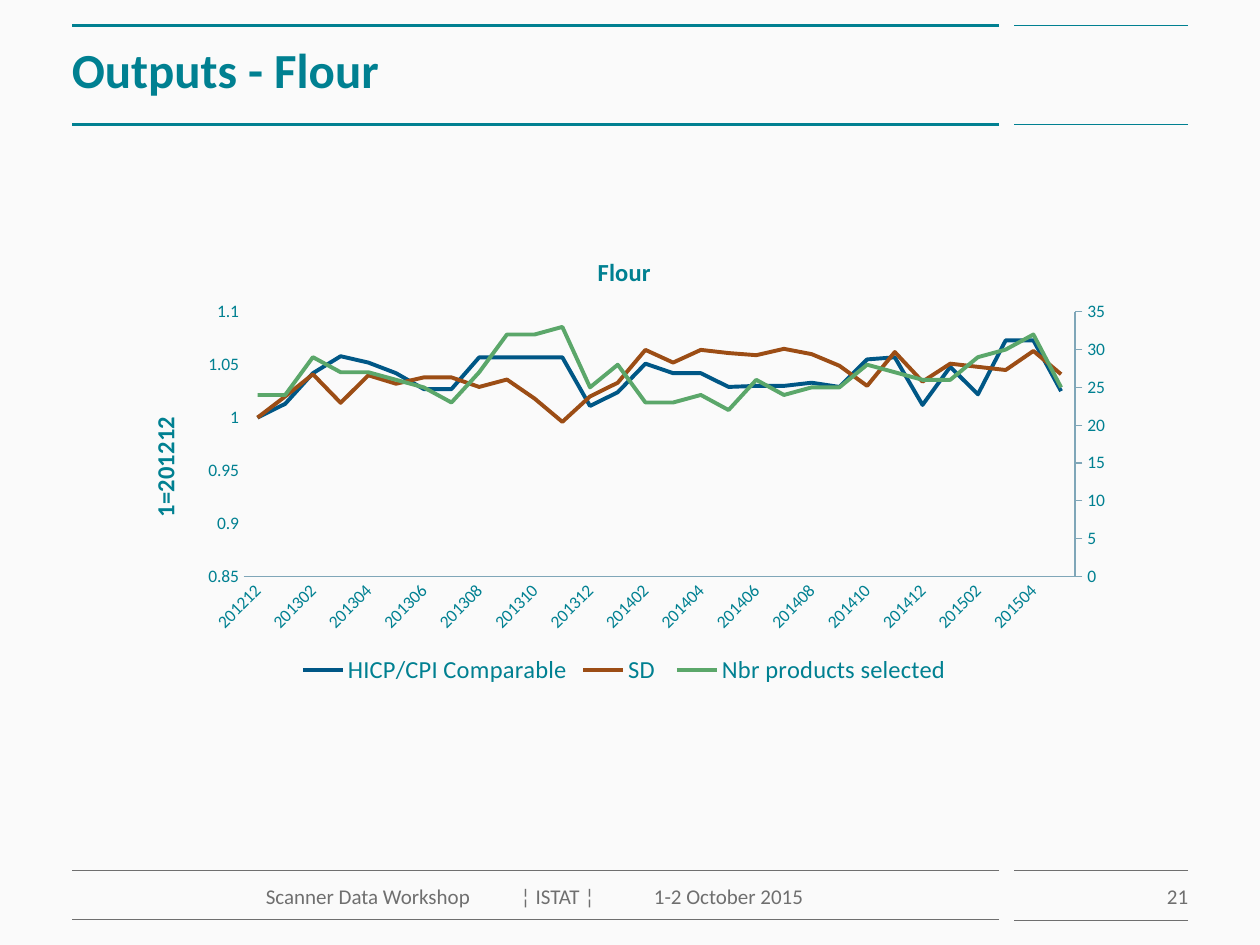
import copy
from dataclasses import dataclass

import lxml.etree
import pptx
import pptx.chart.data
import pptx.dml.color
import pptx.enum.chart
import pptx.enum.shapes
import pptx.enum.text
import pptx.oxml
import pptx.oxml.ns
import pptx.util

Inches = pptx.util.Inches
Pt = pptx.util.Pt
RGBColor = pptx.dml.color.RGBColor
qn = pptx.oxml.ns.qn
ALIGN = pptx.enum.text.PP_ALIGN
ANCHOR = pptx.enum.text.MSO_ANCHOR
TICK = pptx.enum.chart.XL_TICK_MARK

TEAL = RGBColor(0x00, 0x80, 0x91)
GREY = RGBColor(0x6F, 0x6F, 0x6F)
BACKGROUND = RGBColor(0xFA, 0xFA, 0xFA)
AXIS = RGBColor(0x7F, 0xA6, 0xB8)
BLUE = RGBColor(0x00, 0x57, 0x86)
BROWN = RGBColor(0x9C, 0x4D, 0x15)
GREEN = RGBColor(0x5B, 0xA7, 0x6A)
FONT = "Calibri"


@dataclass
class Rule:
    y: float
    color: RGBColor
    wide_pt: float
    narrow_pt: float


@dataclass
class Label:
    text: str
    box: tuple[float, float, float, float]
    insets: tuple[float, float, float, float]
    size: int
    color: RGBColor
    bold: bool = False
    align: ALIGN = ALIGN.LEFT
    anchor: ANCHOR = ANCHOR.TOP
    tabs: tuple[float, ...] = ()


@dataclass
class Series:
    name: str
    color: RGBColor
    values: list[float]


RULES = [
    Rule(0.2, TEAL, 1.5, 0.75),
    Rule(0.99, TEAL, 1.5, 0.75),
    Rule(6.91, GREY, 0.75, 0.25),
    Rule(7.3, GREY, 0.75, 0.25),
]
LABELS = [
    Label("Outputs - Flour", (0.57, 0.2, 7.36, 0.79), (0, 0, 0, 0.1), 28, TEAL,
          bold=True, anchor=ANCHOR.MIDDLE),
    Label("21", (8.05, 6.91, 1.38, 0.39), (0, 0.1, 0, 0), 12, GREY, align=ALIGN.RIGHT),
    Label("Scanner Data Workshop\t¦ ISTAT ¦\t1-2 October 2015", (0.59, 6.91, 7.34, 0.39),
          (1.52, 0.1, 0, 0), 12, GREY, tabs=(2.02, 3.08)),
]
MONTHS = [str(100 * (2012 + m // 12) + m % 12 + 1) for m in range(11, 41)]
SERIES = [
    Series("HICP/CPI Comparable", BLUE, [
        1, 1.013, 1.042, 1.058, 1.052, 1.042, 1.027, 1.027, 1.057, 1.057,
        1.057, 1.057, 1.011, 1.024, 1.051, 1.042, 1.042, 1.029, 1.03, 1.03,
        1.033, 1.029, 1.055, 1.057, 1.012, 1.048, 1.022, 1.073, 1.073, 1.025]),
    Series("SD ", BROWN, [
        1, 1.02, 1.041, 1.014, 1.04, 1.032, 1.038, 1.038, 1.029, 1.036,
        1.018, 0.996, 1.02, 1.033, 1.064, 1.052, 1.064, 1.061, 1.059, 1.065,
        1.06, 1.049, 1.03, 1.062, 1.034, 1.051, 1.048, 1.045, 1.063, 1.041]),
    Series("Nbr products selected", GREEN, [
        24, 24, 29, 27, 27, 26, 25, 23, 27, 32, 32, 33, 25, 28, 23,
        23, 24, 22, 26, 24, 25, 25, 28, 27, 26, 26, 29, 30, 32, 25]),
]


def style_font(font, size: int, color: RGBColor, bold: bool = False) -> None:
    font.name, font.size, font.bold = FONT, Pt(size), bold
    font.color.rgb = color


def draw_line(slide, x1: float, x2: float, y: float, color: RGBColor, width: float) -> None:
    sp = slide.shapes.add_connector(pptx.enum.shapes.MSO_CONNECTOR.STRAIGHT,
                                    Inches(x1), Inches(y), Inches(x2), Inches(y))
    sp.line.color.rgb = color
    sp.line.width = Pt(width)
    lxml.etree.SubElement(sp._element.spPr, qn("a:effectLst"))


def draw_rule(slide, rule: Rule) -> None:
    draw_line(slide, 7.93, 0.57, rule.y, rule.color, rule.wide_pt)
    draw_line(slide, 9.43, 8.05, rule.y, rule.color, rule.narrow_pt)


def draw_label(slide, label: Label) -> None:
    tf = slide.shapes.add_textbox(*map(Inches, label.box)).text_frame
    tf.word_wrap = True
    tf.vertical_anchor = label.anchor
    tf.margin_left, tf.margin_top, tf.margin_right, tf.margin_bottom = map(Inches, label.insets)
    p = tf.paragraphs[0]
    p.alignment = label.align
    if label.tabs:
        tab_list = lxml.etree.SubElement(p._p.get_or_add_pPr(), qn("a:tabLst"))
        for stop in label.tabs:
            lxml.etree.SubElement(tab_list, qn("a:tab"), pos=str(Inches(stop)), algn="l")
    r = p.add_run()
    r.text = label.text
    style_font(r.font, label.size, label.color, label.bold)


def write_title(owner, text: str) -> None:
    r = owner.text_frame.paragraphs[0].add_run()
    r.text = text
    style_font(r.font, 14, TEAL, True)


def set_layout(plot_area, x: float, y: float, w: float, h: float) -> None:
    for old in plot_area.findall(qn("c:layout")):
        plot_area.remove(old)
    layout = lxml.etree.Element(qn("c:layout"))
    manual = lxml.etree.SubElement(layout, qn("c:manualLayout"))
    settings = {"layoutTarget": "inner", "xMode": "edge", "yMode": "edge",
                "x": x, "y": y, "w": w, "h": h}
    for tag, value in settings.items():
        lxml.etree.SubElement(manual, qn(f"c:{tag}"), val=str(value))
    plot_area.insert(0, layout)


def move_last_series_right(chart) -> None:
    plot_area = chart._chartSpace.chart.plotArea
    left = plot_area.find(qn("c:lineChart"))
    right = copy.deepcopy(left)
    left.remove(left.findall(qn("c:ser"))[-1])
    for ser in right.findall(qn("c:ser"))[:-1]:
        right.remove(ser)
    for ax_id, number in zip(right.findall(qn("c:axId")), ("50001", "50002")):
        ax_id.set("val", number)
    left.addnext(right)
    ns = 'xmlns:c="http://schemas.openxmlformats.org/drawingml/2006/chart"'
    cat_axis = pptx.oxml.parse_xml(
        f'<c:catAx {ns}><c:axId val="50001"/><c:scaling><c:orientation val="minMax"/></c:scaling>'
        '<c:delete val="1"/><c:axPos val="b"/><c:crossAx val="50002"/></c:catAx>')
    val_axis = pptx.oxml.parse_xml(
        f'<c:valAx {ns}><c:axId val="50002"/><c:scaling><c:orientation val="minMax"/>'
        '<c:max val="35"/><c:min val="0"/></c:scaling><c:delete val="0"/><c:axPos val="r"/>'
        '<c:numFmt formatCode="General" sourceLinked="0"/><c:majorTickMark val="out"/>'
        '<c:minorTickMark val="none"/><c:tickLblPos val="nextTo"/><c:crossAx val="50001"/>'
        '<c:crosses val="max"/><c:majorUnit val="5"/></c:valAx>')
    plot_area.findall(qn("c:valAx"))[-1].addnext(val_axis)
    val_axis.addnext(cat_axis)
    axis = pptx.chart.axis.ValueAxis(val_axis)
    style_font(axis.tick_labels.font, 10, TEAL)
    axis.format.line.color.rgb = AXIS


def draw_chart(slide) -> None:
    data = pptx.chart.data.CategoryChartData()
    data.categories = MONTHS
    for series in SERIES:
        data.add_series(series.name, series.values)
    chart = slide.shapes.add_chart(pptx.enum.chart.XL_CHART_TYPE.LINE, Inches(0.98), Inches(1.86),
                                   Inches(7.95), Inches(3.62), data).chart
    style_font(chart.font, 10, TEAL)
    write_title(chart.chart_title, "Flour")
    chart.has_legend = True
    chart.legend.position = pptx.enum.chart.XL_LEGEND_POSITION.BOTTOM
    chart.legend.include_in_layout = False
    style_font(chart.legend.font, 14, TEAL)
    chart.plots[0].vary_by_categories = False
    for line, series in zip(chart.plots[0].series, SERIES):
        line.smooth = False
        line.marker.style = pptx.enum.chart.XL_MARKER_STYLE.NONE
        line.format.line.color.rgb = series.color
        line.format.line.width = Pt(2.25)
    months, index = chart.category_axis, chart.value_axis
    for axis in (months, index):
        axis.major_tick_mark = axis.minor_tick_mark = TICK.NONE
        axis.has_major_gridlines = False
        style_font(axis.tick_labels.font, 10, TEAL)
    months.format.line.color.rgb = AXIS
    months._element.find(qn("c:txPr")).find(qn("a:bodyPr")).set("rot", "-2700000")
    skip = lxml.etree.Element(qn("c:tickLblSkip"), val="2")
    months._element.find(qn("c:noMultiLvlLbl")).addprevious(skip)
    index.minimum_scale, index.maximum_scale, index.major_unit = 0.85, 1.1, 0.05
    index.tick_labels.number_format = "General"
    index.tick_labels.number_format_is_linked = False
    index.format.line.fill.background()
    write_title(index.axis_title, "1=201212")
    index.axis_title.text_frame._txBody.bodyPr.set("rot", "-5400000")
    set_layout(chart._chartSpace.chart.plotArea, 0.12, 0.17, 0.83, 0.58)
    move_last_series_right(chart)


def main() -> None:
    """Build the flour price index slide."""
    prs = pptx.Presentation()
    prs.slide_width, prs.slide_height = Inches(10), Inches(7.5)
    slide = prs.slides.add_slide(prs.slide_layouts[6])
    slide.background.fill.solid()
    slide.background.fill.fore_color.rgb = BACKGROUND
    for rule in RULES:
        draw_rule(slide, rule)
    for label in LABELS:
        draw_label(slide, label)
    draw_chart(slide)
    prs.save("out.pptx")


if __name__ == "__main__":
    main()
